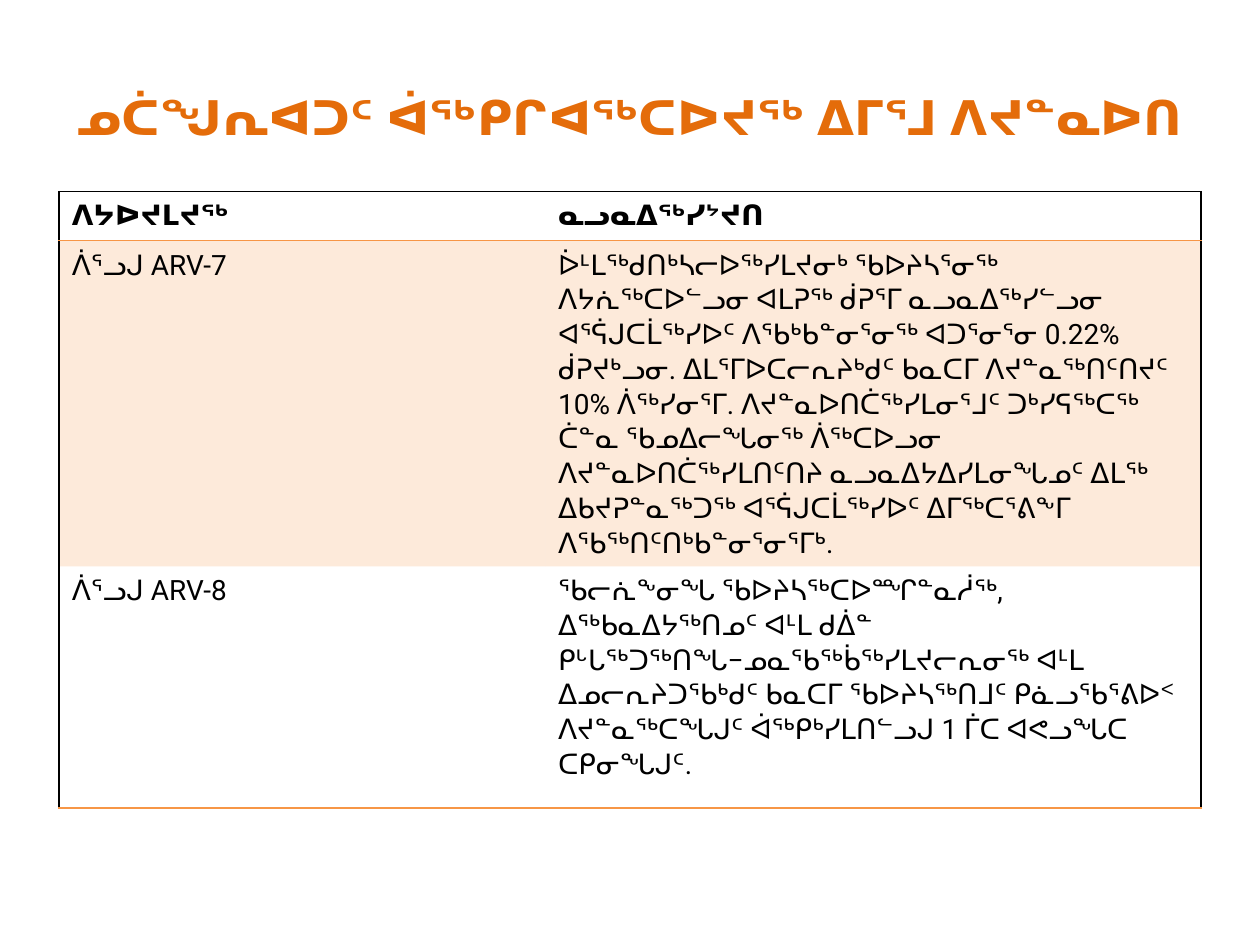
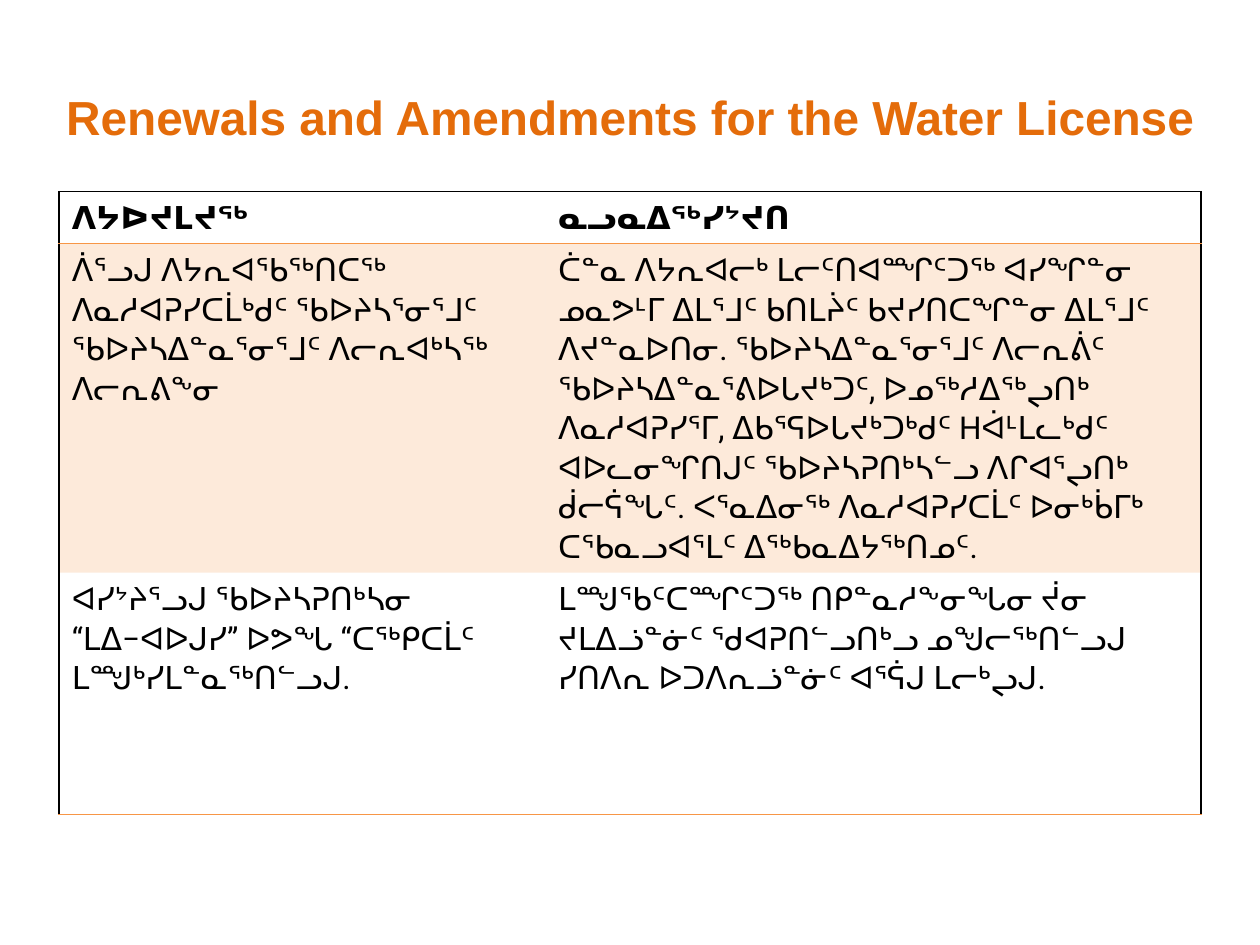
from dataclasses import dataclass

from lxml.etree import SubElement
from pptx import Presentation
from pptx.dml.color import RGBColor
from pptx.enum.text import MSO_ANCHOR, MSO_AUTO_SIZE, PP_ALIGN
from pptx.oxml.ns import qn
from pptx.util import Inches, Pt

# Shared look
ORANGE = "E46C0A"
BAND = "F79646"
BLACK = "000000"
BAND_OPACITY = 20
TITLE_FONT = "Arial"
TABLE_FONT = "Roboto"
NO_GRID_STYLE = "{2D5ABB26-0587-4C30-8999-92F81FD0307C}"
COLUMN_WIDTHS = (3.86, 5.2)
ROW_HEIGHTS = (0.39, 2.52, 1.92)
HEADINGS = ("ᐱᔭᐅᔪᒪᔪᖅ", "ᓇᓗᓇᐃᖅᓯᔾᔪᑎ")


@dataclass
class Amendment:
    request: str
    explanation: str


@dataclass
class LicenceSlide:
    title: str
    text_size: int
    amendments: list[Amendment]


LICENCE_SLIDES = [
    LicenceSlide("ᓄᑖᖑᕆᐊᑐᑦ ᐋᖅᑭᒋᐊᖅᑕᐅᔪᖅ ᐃᒥᕐᒧ ᐱᔪᓐᓇᐅᑎ", 16, [
        Amendment(
            "ᐲᕐᓗᒍ ARV-7",
            "ᐆᒻᒪᖅᑯᑎᒃᓴᓕᐅᖅᓯᒪᔪᓂᒃ ᖃᐅᔨᓴᕐᓂᖅ ᐱᔭᕇᖅᑕᐅᓪᓗᓂ ᐊᒪᕈᖅ ᑰᕈᕐᒥ ᓇᓗᓇᐃᖅᓯᓪᓗᓂ "
            "ᐊᕐᕌᒍᑕᒫᖅᓯᐅᑦ ᐱᖃᒃᑲᓐᓂᕐᓂᖅ ᐊᑐᕐᓂᕐᓂ 0.22% ᑰᕈᔪᒃᓗᓂ. ᐃᒪᕐᒥᐅᑕᓕᕆᔨᒃᑯᑦ ᑲᓇᑕᒥ "
            "ᐱᔪᓐᓇᖅᑎᑦᑎᔪᑦ 10% ᐲᖅᓯᓂᕐᒥ. ᐱᔪᓐᓇᐅᑎᑖᖅᓯᒪᓂᕐᒧᑦ ᑐᒃᓯᕋᖅᑕᖅ ᑖᓐᓇ ᖃᓄᐃᓕᖓᓂᖅ "
            "ᐲᖅᑕᐅᓗᓂ ᐱᔪᓐᓇᐅᑎᑖᖅᓯᒪᑎᑦᑎᔨ ᓇᓗᓇᐃᔭᐃᓯᒪᓂᖓᓄᑦ ᐃᒪᖅ ᐃᑲᔪᕈᓐᓇᖅᑐᖅ "
            "ᐊᕐᕌᒍᑕᒫᖅᓯᐅᑦ ᐃᒥᖅᑕᕐᕕᖕᒥ ᐱᖃᖅᑎᑦᑎᒃᑲᓐᓂᕐᓂᕐᒥᒃ."),
        Amendment(
            "ᐲᕐᓗᒍ ARV-8",
            "ᖃᓕᕇᖕᓂᖓ ᖃᐅᔨᓴᖅᑕᐅᙱᓐᓇᓲᖅ, ᐃᖅᑲᓇᐃᔭᖅᑎᓄᑦ ᐊᒻᒪ ᑯᐄᓐ "
            "ᑭᒡᒐᖅᑐᖅᑎᖓ−ᓄᓇᖃᖅᑳᖅᓯᒪᔪᓕᕆᓂᖅ ᐊᒻᒪ ᐃᓄᓕᕆᔨᑐᖃᒃᑯᑦ ᑲᓇᑕᒥ ᖃᐅᔨᓴᖅᑎᒧᑦ "
            "ᑭᓈᓗᖃᕐᕕᐅᑉ ᐱᔪᓐᓇᖅᑕᖓᒍᑦ ᐋᖅᑭᒃᓯᒪᑎᓪᓗᒍ 1 ᒦᑕ ᐊᕙᓗᖓᑕ ᑕᑭᓂᖓᒍᑦ."),
    ]),
    LicenceSlide("Renewals and Amendments for the Water License", 18, [
        Amendment(
            "ᐲᕐᓗᒍ ᐱᔭᕆᐊᖃᖅᑎᑕᖅ ᐱᓇᓱᐊᕈᓯᑕᒫᒃᑯᑦ ᖃᐅᔨᓴᕐᓂᕐᒧᑦ ᖃᐅᔨᓴᐃᓐᓇᕐᓂᕐᒧᑦ "
            "ᐱᓕᕆᐊᒃᓴᖅ ᐱᓕᕆᕕᖕᓂ",
            "ᑖᓐᓇ ᐱᔭᕆᐊᓕᒃ ᒪᓕᑦᑎᐊᙱᑦᑐᖅ ᐊᓯᖏᓐᓂ ᓄᓇᕗᒻᒥ ᐃᒪᕐᒧᑦ ᑲᑎᒪᔩᑦ ᑲᔪᓯᑎᑕᖏᓐᓂ "
            "ᐃᒪᕐᒧᑦ ᐱᔪᓐᓇᐅᑎᓂ. ᖃᐅᔨᓴᐃᓐᓇᕐᓂᕐᒧᑦ ᐱᓕᕆᕖᑦ ᖃᐅᔨᓴᐃᓐᓇᕐᕕᐅᒐᔪᒃᑐᑦ, "
            "ᐅᓄᖅᓱᐃᖅᖢᑎᒃ ᐱᓇᓱᐊᕈᓯᕐᒥ, ᐃᑲᕐᕋᐅᒐᔪᒃᑐᒃᑯᑦ Hᐋᒻᒪᓚᒃᑯᑦ ᐊᐅᓚᓂᖏᑎᒍᑦ "
            "ᖃᐅᔨᓴᕈᑎᒃᓴᓪᓗ ᐱᒋᐊᕐᖢᑎᒃ ᑰᓕᕌᖓᑦ. ᐸᕐᓇᐃᓂᖅ ᐱᓇᓱᐊᕈᓯᑕᒫᑦ ᐅᓂᒃᑳᒥᒃ "
            "ᑕᖃᓇᓗᐊᕐᒪᑦ ᐃᖅᑲᓇᐃᔭᖅᑎᓄᑦ."),
        Amendment(
            "ᐊᓯᔾᔨᕐᓗᒍ ᖃᐅᔨᓴᕈᑎᒃᓴᓂ “ᒪᐃ−ᐊᐅᒍᓯ” ᐅᕗᖓ “ᑕᖅᑭᑕᒫᑦ ᒪᙳᒃᓯᒪᓐᓇᖅᑎᓪᓗᒍ.",
            "ᒪᙳᖃᑦᑕᙱᑦᑐᖅ ᑎᑭᓐᓇᓱᖕᓂᖓᓂ ᔫᓂ ᔪᒪᐃᓘᓐᓃᑦ ᖁᐊᕈᑎᓪᓗᑎᒃᓗ ᓄᖑᓕᖅᑎᓪᓗᒍ "
            "ᓯᑎᐱᕆ ᅐᑐᐱᕆᓘᓐᓃᑦ ᐊᕐᕌᒍ ᒪᓕᒃᖢᒍ.".replace("ᅐ", "ᐅ")),
    ]),
]


def rgb(value: str) -> RGBColor:
    return RGBColor.from_string(value)


def format_text(paragraph, font_name: str, size: float, color: str, bold: bool) -> None:
    for run in paragraph.runs:
        run.font.name = font_name
        run.font.size = Pt(size)
        run.font.color.rgb = rgb(color)
        run.font.bold = bold


def add_title(slide, text: str) -> None:
    title = slide.shapes.title
    title.left, title.top = Inches(0), Inches(0.3)
    title.width, title.height = Inches(10), Inches(1.25)
    frame = title.text_frame
    frame.text = text
    frame.word_wrap = True
    frame.auto_size = MSO_AUTO_SIZE.NONE
    frame.vertical_anchor = MSO_ANCHOR.MIDDLE
    frame.paragraphs[0].alignment = PP_ALIGN.CENTER
    format_text(frame.paragraphs[0], TITLE_FONT, 27.3, ORANGE, True)


def set_fill(cell, banded: bool) -> None:
    if not banded:
        cell.fill.background()
        return
    cell.fill.solid()
    cell.fill.fore_color.rgb = rgb(BAND)
    color = cell._tc.tcPr.find(f"{qn('a:solidFill')}/{qn('a:srgbClr')}")
    SubElement(color, qn("a:alpha"), val=str(BAND_OPACITY * 1000))


def set_borders(cell, borders: dict[str, str]) -> None:
    """Draw one-point lines, keyed L, R, T, B in that order, ahead of the fill."""
    properties = cell._tc.get_or_add_tcPr()
    for position, (side, color) in enumerate(borders.items()):
        line = SubElement(properties, qn(f"a:ln{side}"), w=str(Pt(1)))
        SubElement(SubElement(line, qn("a:solidFill")), qn("a:srgbClr"), val=color)
        properties.insert(position, line)


def cell_borders(row: int, column: int) -> dict[str, str]:
    borders = {"L" if column == 0 else "R": BLACK}
    if row == 0:
        borders["T"] = BLACK
    if row != 1:
        borders["B"] = BAND
    return borders


def add_amendment_table(slide, content: LicenceSlide) -> None:
    rows = [HEADINGS] + [(item.request, item.explanation) for item in content.amendments]
    table = slide.shapes.add_table(
        len(rows), len(HEADINGS), Inches(0.47), Inches(1.52),
        Inches(sum(COLUMN_WIDTHS)), Inches(sum(ROW_HEIGHTS))).table
    table._tbl.tblPr.find(qn("a:tableStyleId")).text = NO_GRID_STYLE
    table.horz_banding = False
    for column, width in zip(table.columns, COLUMN_WIDTHS):
        column.width = Inches(width)
    for row, height in zip(table.rows, ROW_HEIGHTS):
        row.height = Inches(height)

    for row_index, texts in enumerate(rows):
        for column_index, text in enumerate(texts):
            cell = table.cell(row_index, column_index)
            cell.text_frame.text = text
            paragraph = cell.text_frame.paragraphs[0]
            paragraph.line_spacing = 1.07
            paragraph.space_after = Pt(8)
            format_text(paragraph, TABLE_FONT, content.text_size, BLACK, row_index == 0)
            set_fill(cell, row_index == 1)
            set_borders(cell, cell_borders(row_index, column_index))


def main() -> None:
    presentation = Presentation()
    presentation.slide_width, presentation.slide_height = Inches(10), Inches(7.5)
    title_only = presentation.slide_layouts[5]
    for content in LICENCE_SLIDES:
        slide = presentation.slides.add_slide(title_only)
        add_title(slide, content.title)
        add_amendment_table(slide, content)
    presentation.save("out.pptx")


if __name__ == "__main__":
    main()
